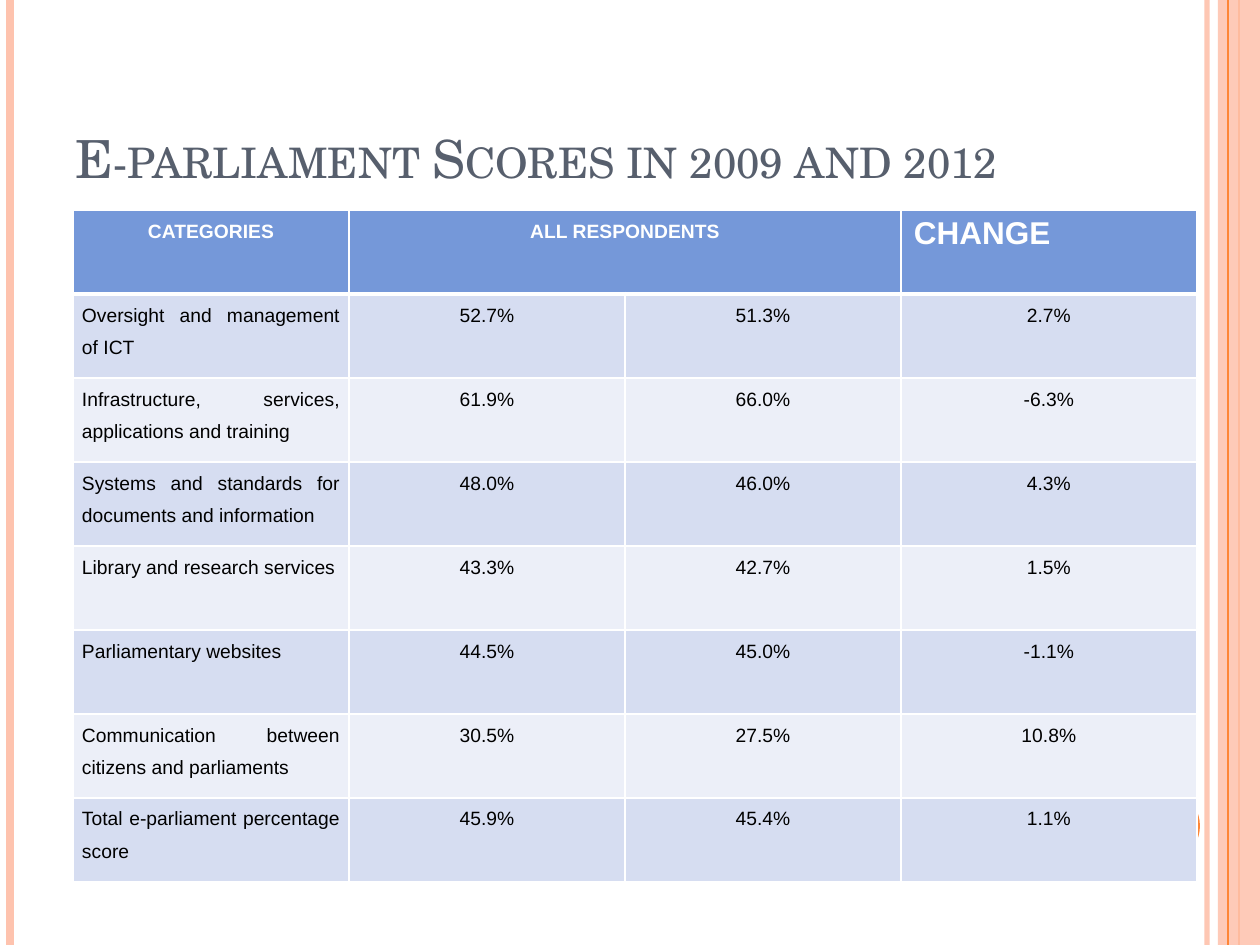
import dataclasses

import lxml.etree
import pptx
import pptx.dml.color
import pptx.enum.shapes
import pptx.enum.text
import pptx.oxml.ns
import pptx.util

RGBColor = pptx.dml.color.RGBColor
Align = pptx.enum.text.PP_ALIGN
qn = pptx.oxml.ns.qn

PX_PER_INCH = 126
WIDTH, HEIGHT = 1260, 945
PEACH = RGBColor(0xFE, 0xC3, 0xAE)
ORANGE = RGBColor(0xFE, 0x86, 0x37)
SLATE = RGBColor(0x57, 0x5F, 0x6D)
HEADER_BLUE = RGBColor(0x75, 0x98, 0xD9)
BAND_DARK = RGBColor(0xD6, 0xDD, 0xF1)
BAND_LIGHT = RGBColor(0xEC, 0xEF, 0xF8)
WHITE = RGBColor(0xFF, 0xFF, 0xFF)
BLACK = RGBColor(0, 0, 0)

COLUMNS = (276, 276, 276, 296)
ROW_HEIGHT = 84
HEADINGS = ("CATEGORIES", "ALL RESPONDENTS", "", "CHANGE")


@dataclasses.dataclass(frozen=True)
class Stripe:
    x: int
    weight: float
    color: RGBColor
    opacity: int = 100


@dataclasses.dataclass(frozen=True)
class Block:
    shape: pptx.enum.shapes.MSO_SHAPE
    x: int
    y: int
    w: int
    h: int
    color: RGBColor
    opacity: int = 100


@dataclasses.dataclass(frozen=True)
class Score:
    category: str
    first: str
    second: str
    change: str


@dataclasses.dataclass(frozen=True)
class CellStyle:
    fill: RGBColor
    color: RGBColor
    align: Align
    size: int = 11
    bold: bool = False
    spacing: float = 1.5
    side_px: int = 9
    top_px: int = 0


MARGIN_STRIPES = (
    Stripe(1207, 3, PEACH, 93),
    Stripe(10, 4.5, PEACH),
    Stripe(1239, 1.5, ORANGE),
)
BAND = Block(pptx.enum.shapes.MSO_SHAPE.RECTANGLE, 1218, 0, 42, HEIGHT, PEACH, 87)
BAND_STRIPE = Stripe(1228, 0.75, ORANGE)
NUMBER_DISC = Block(pptx.enum.shapes.MSO_SHAPE.OVAL, 1124, 788, 76, 76, ORANGE)

SCORES = (
    Score("Oversight and management of ICT", "52.7%", "51.3%", "2.7%"),
    Score("Infrastructure, services, applications and training", "61.9%", "66.0%", "-6.3%"),
    Score("Systems and standards for documents and information", "48.0%", "46.0%", "4.3%"),
    Score("Library and research services", "43.3%", "42.7%", "1.5%"),
    Score("Parliamentary websites", "44.5%", "45.0%", "-1.1%"),
    Score("Communication between citizens and parliaments", "30.5%", "27.5%", "10.8%"),
    Score("Total e-parliament percentage score", "45.9%", "45.4%", "1.1%"),
)


def px(n: int) -> pptx.util.Emu:
    return pptx.util.Emu(round(n * 914400 / PX_PER_INCH))


def set_opacity(sp, percent: int) -> None:
    if percent < 100:
        color = next(sp._element.spPr.iter(qn("a:srgbClr")))
        lxml.etree.SubElement(color, qn("a:alpha"), val=str(percent * 1000))


def draw_stripe(slide, stripe: Stripe) -> None:
    line = slide.shapes.add_connector(
        pptx.enum.shapes.MSO_CONNECTOR.STRAIGHT,
        px(stripe.x), px(0), px(stripe.x), px(HEIGHT))
    line.line.color.rgb = stripe.color
    line.line.width = pptx.util.Pt(stripe.weight)
    set_opacity(line, stripe.opacity)
    lxml.etree.SubElement(line._element.spPr, qn("a:effectLst"))


def draw_block(slide, block: Block) -> None:
    sp = slide.shapes.add_shape(
        block.shape, px(block.x), px(block.y), px(block.w), px(block.h))
    sp.shadow.inherit = False
    sp.fill.solid()
    sp.fill.fore_color.rgb = block.color
    sp.line.fill.background()
    set_opacity(sp, block.opacity)


def draw_title(slide, text: str) -> None:
    sp = slide.shapes.add_textbox(px(63), px(38), px(1029), px(157))
    tf = sp.text_frame
    tf.word_wrap = True
    tf.vertical_anchor = pptx.enum.text.MSO_ANCHOR.BOTTOM
    tf.text = text
    r = tf.paragraphs[0].runs[0]
    r.font.name = "TeX Gyre Schola"
    r.font.size = pptx.util.Pt(30)
    r.font.color.rgb = SLATE
    r.font._element.set("cap", "small")


def set_borders(cell, top: int, bottom: int) -> None:
    tc_pr = cell._tc.get_or_add_tcPr()
    for side, weight in (("L", 1), ("R", 1), ("T", top), ("B", bottom)):
        ln = lxml.etree.SubElement(
            tc_pr, qn(f"a:ln{side}"), w=str(pptx.util.Pt(weight)))
        fill = lxml.etree.SubElement(ln, qn("a:solidFill"))
        lxml.etree.SubElement(fill, qn("a:srgbClr"), val=str(WHITE))


def fill_cell(cell, text: str, style: CellStyle) -> None:
    cell.fill.solid()
    cell.fill.fore_color.rgb = style.fill
    cell.margin_left = cell.margin_right = px(style.side_px)
    cell.margin_top = cell.margin_bottom = px(style.top_px)
    cell.text_frame.text = text
    p = cell.text_frame.paragraphs[0]
    p.alignment = style.align
    p.line_spacing = style.spacing
    for r in p.runs:
        r.font.name = "Arial"
        r.font.size = pptx.util.Pt(style.size)
        r.font.bold = style.bold
        r.font.color.rgb = style.color


def draw_scores(slide) -> None:
    rows = [HEADINGS, *(dataclasses.astuple(score) for score in SCORES)]
    table = slide.shapes.add_table(
        len(rows), len(COLUMNS), px(73), px(210),
        px(sum(COLUMNS)), px(ROW_HEIGHT * len(rows))).table
    for column, width in zip(table.columns, COLUMNS):
        column.width = px(width)
    heading = CellStyle(HEADER_BLUE, WHITE, Align.CENTER, bold=True)
    change = dataclasses.replace(
        heading, align=Align.LEFT, size=18, spacing=1.0, side_px=13, top_px=6)
    for i, row in enumerate(rows):
        table.rows[i].height = px(ROW_HEIGHT)
        band = BAND_DARK if i % 2 else BAND_LIGHT
        for j, text in enumerate(row):
            if i == 0:
                style = change if text == "CHANGE" else heading
            else:
                align = Align.CENTER if j else Align.JUSTIFY
                style = CellStyle(band, BLACK, align)
            cell = table.cell(i, j)
            set_borders(cell, 3 if i == 1 else 1, 3 if i == 0 else 1)
            fill_cell(cell, text, style)
    table.cell(0, 1).merge(table.cell(0, 2))


def main() -> None:
    prs = pptx.Presentation()
    prs.slide_width, prs.slide_height = px(WIDTH), px(HEIGHT)
    slide = prs.slides.add_slide(prs.slide_layouts[6])
    for stripe in MARGIN_STRIPES:
        draw_stripe(slide, stripe)
    draw_block(slide, BAND)
    draw_stripe(slide, BAND_STRIPE)
    draw_block(slide, NUMBER_DISC)
    draw_title(slide, "E-parliament Scores in 2009 and 2012")
    draw_scores(slide)
    prs.save("out.pptx")


if __name__ == "__main__":
    main()
